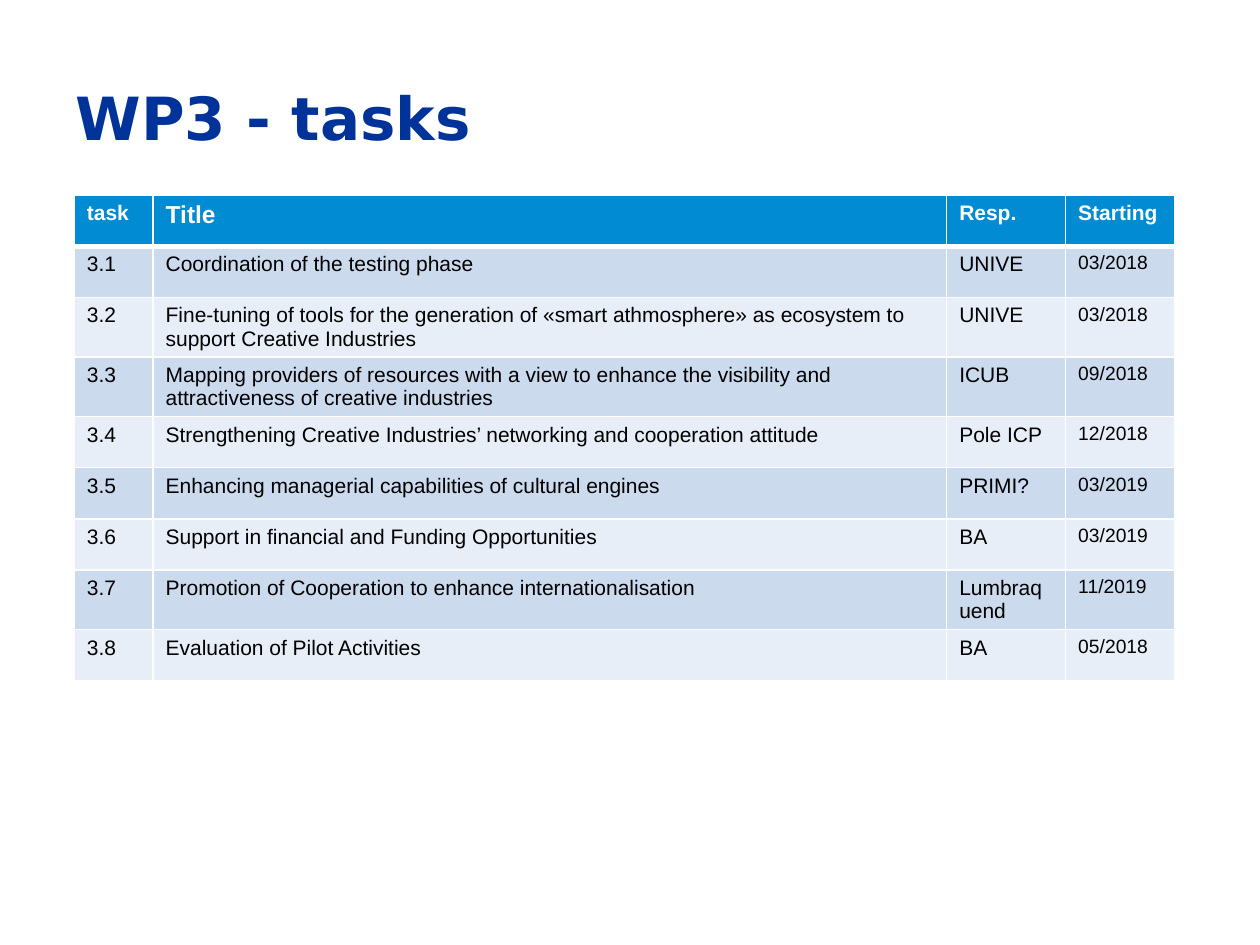
import pptx
import pptx.dml.color
import pptx.enum.text
import pptx.oxml
import pptx.oxml.ns
import pptx.util

Pt = pptx.util.Pt

# Content
TITLE = "WP3 - tasks"
HEADER = ("task", "Title", "Resp.", "Starting")
TASKS = [
    ("3.1", "Coordination of the testing phase", "UNIVE", "03/2018"),
    ("3.2", "Fine-tuning of tools for the generation of «smart athmosphere» "
            "as ecosystem to support Creative Industries", "UNIVE", "03/2018"),
    ("3.3", "Mapping providers of resources with a view to enhance the visibility "
            "and attractiveness of creative industries", "ICUB", "09/2018"),
    ("3.4", "Strengthening Creative Industries’ networking and cooperation attitude",
     "Pole ICP", "12/2018"),
    ("3.5", "Enhancing managerial capabilities of cultural engines", "PRIMI?", "03/2019"),
    ("3.6", "Support in financial and Funding Opportunities", "BA", "03/2019"),
    ("3.7", "Promotion of Cooperation to enhance internationalisation",
     "Lumbraquend", "11/2019"),
    ("3.8", "Evaluation of Pilot Activities", "BA", "05/2018"),
]

# Layout and style
TABLE_LEFT, TABLE_TOP = 42.5, 111.5
COLUMN_WIDTHS = (45, 453.5, 68, 62.5)
ROW_HEIGHT = 29.2
WRAPPED_HEIGHT = 34
WRAPPED_TASKS = ("3.2", "3.3", "3.7")
HEADER_SIZES = (12, 14, 12, 12)
BODY_SIZES = (12, 12, 12, 11)
HEADER_FILL = "008BD2"
BAND_FILLS = ("CCDAEE", "E7EEF7")


def color(value):
    return pptx.dml.color.RGBColor.from_string(value)


def style_font(paragraph, name, size, value, bold):
    for span in paragraph.runs:
        span.font.name = name
        span.font.size = Pt(size)
        span.font.bold = bold
        span.font.color.rgb = color(value)


def add_borders(cell, top, bottom):
    properties = cell._tc.get_or_add_tcPr()
    for side, width in (("L", 1), ("R", 1), ("T", top), ("B", bottom)):
        properties.append(pptx.oxml.parse_xml(
            f'<a:ln{side} {pptx.oxml.ns.nsdecls("a")} w="{int(Pt(width))}">'
            f'<a:solidFill><a:srgbClr val="FFFFFF"/></a:solidFill></a:ln{side}>'))


deck = pptx.Presentation()
deck.slide_width, deck.slide_height = Pt(720), Pt(540)
page = deck.slides.add_slide(deck.slide_layouts[5])

# Title
title = page.shapes.title
title.left, title.top, title.width, title.height = Pt(36), Pt(21.6), Pt(648), Pt(90)
title.text_frame.text = TITLE
title.text_frame.vertical_anchor = pptx.enum.text.MSO_ANCHOR.MIDDLE
para = title.text_frame.paragraphs[0]
para.alignment = pptx.enum.text.PP_ALIGN.LEFT
style_font(para, "DejaVu Sans", 34, "003399", True)

# Task table
rows = [HEADER] + TASKS
heights = [WRAPPED_HEIGHT if row[0] in WRAPPED_TASKS else ROW_HEIGHT for row in rows]
table = page.shapes.add_table(
    len(rows), len(HEADER), Pt(TABLE_LEFT), Pt(TABLE_TOP),
    Pt(sum(COLUMN_WIDTHS)), Pt(sum(heights))).table
for column, width in zip(table.columns, COLUMN_WIDTHS):
    column.width = Pt(width)

for r, (row, height) in enumerate(zip(rows, heights)):
    table.rows[r].height = Pt(height)
    is_header = r == 0
    fill = HEADER_FILL if is_header else BAND_FILLS[(r - 1) % 2]
    sizes = HEADER_SIZES if is_header else BODY_SIZES
    for c, (text, size) in enumerate(zip(row, sizes)):
        cell = table.cell(r, c)
        add_borders(cell, top=3 if r == 1 else 1, bottom=3 if is_header else 1)
        cell.fill.solid()
        cell.fill.fore_color.rgb = color(fill)
        cell.text_frame.text = text
        style_font(cell.text_frame.paragraphs[0], "Arial", size,
                   "FFFFFF" if is_header else "000000", is_header)

deck.save("out.pptx")
